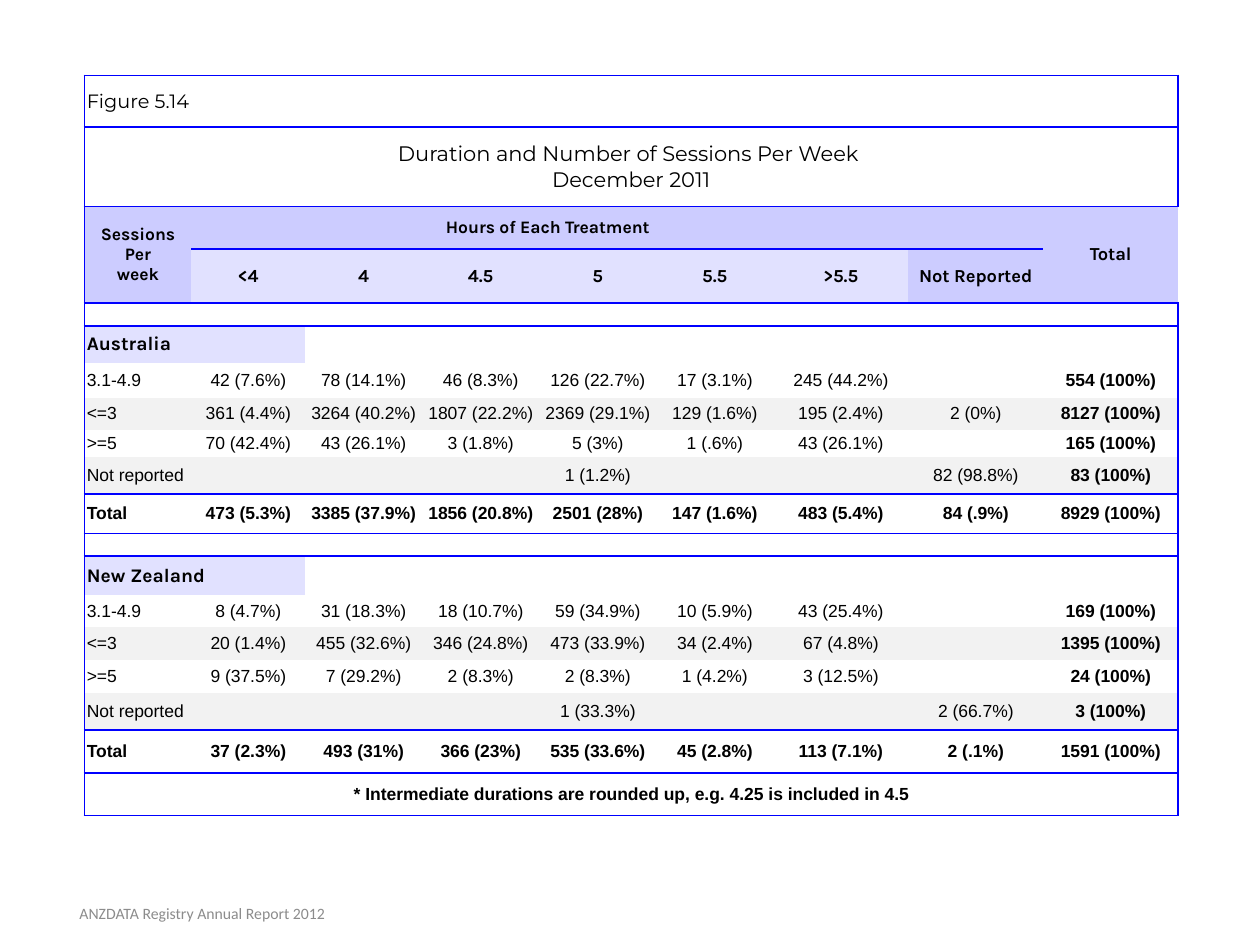
from lxml.etree import SubElement
from pptx import Presentation
from pptx.dml.color import RGBColor
from pptx.enum.text import MSO_ANCHOR, PP_ALIGN
from pptx.oxml.ns import qn
from pptx.util import Cm, Pt

BLACK = RGBColor(0x00, 0x00, 0x00)
BLUE = RGBColor(0x00, 0x00, 0xFF)
LAVENDER = RGBColor(0xCC, 0xCC, 0xFF)
PALE_LAVENDER = RGBColor(0xE1, 0xE1, 0xFF)
PALE_GREY = RGBColor(0xF2, 0xF2, 0xF2)
FOOTER_GREY = RGBColor(0x8C, 0x8C, 0x8C)
NO_STYLE = "{2D5ABB26-0587-4C30-8999-92F81FD0307C}"

COLUMN_WIDTHS = [2.16, 2.29] + [2.36] * 4 + [2.72] * 3
ROW_HEIGHTS = [1.04, 1.6, 0.86, 1.09, 0.46, 0.74, 0.71, 0.64, 0.56, 0.74, 0.79,
               0.46, 0.79, 0.64, 0.66, 0.66, 0.76, 0.86, 0.86]
ROWS = [
    ["Figure 5.14"],
    ["Duration and Number of Sessions Per Week \nDecember 2011"],
    ["Sessions\nPer\nweek", "Hours of Each Treatment ", "", "", "", "", "", "", "Total"],
    ["", "<4", "4", "4.5", "5", "5.5", ">5.5", "Not Reported"],
    [],
    ["Australia"],
    ["3.1-4.9", "42 (7.6%)", "78 (14.1%)", "46 (8.3%)", "126 (22.7%)", "17 (3.1%)",
     "245 (44.2%)", "", "554 (100%)"],
    ["<=3", "361 (4.4%)", "3264 (40.2%)", "1807 (22.2%)", "2369 (29.1%)", "129 (1.6%)",
     "195 (2.4%)", "2 (0%)", "8127 (100%)"],
    [">=5", "70 (42.4%)", "43 (26.1%)", "3 (1.8%)", "5 (3%)", "1 (.6%)",
     "43 (26.1%)", "", "165 (100%)"],
    ["Not reported", "", "", "", "1 (1.2%)", "", "", "82 (98.8%)", "83 (100%)"],
    ["Total", "473 (5.3%)", "3385 (37.9%)", "1856 (20.8%)", "2501 (28%)", "147 (1.6%)",
     "483 (5.4%)", "84 (.9%)", "8929 (100%)"],
    [],
    ["New Zealand"],
    ["3.1-4.9", "8 (4.7%)", "31 (18.3%)", "18 (10.7%)", "59 (34.9%)", "10 (5.9%)",
     "43 (25.4%)", "", "169 (100%)"],
    ["<=3", "20 (1.4%)", "455 (32.6%)", "346 (24.8%)", "473 (33.9%)", "34 (2.4%)",
     "67 (4.8%)", "", "1395 (100%)"],
    [">=5", "9 (37.5%)", "7 (29.2%)", "2 (8.3%)", "2 (8.3%)", "1 (4.2%)",
     "3 (12.5%)", "", "24 (100%)"],
    ["Not reported", "", "", "", "1 (33.3%)", "", "", "2 (66.7%)", "3 (100%)"],
    ["Total", "37 (2.3%)", "493 (31%)", "366 (23%)", "535 (33.6%)", "45 (2.8%)",
     "113 (7.1%)", "2 (.1%)", "1591 (100%)"],
    ["* Intermediate durations are rounded up, e.g. 4.25 is included in 4.5"],
]
LAST_ROW, LAST_COLUMN = len(ROWS) - 1, len(COLUMN_WIDTHS) - 1
HEADER_ROWS = (2, 3)
COUNTRY_ROWS = (5, 12)
SHADED_ROWS = (7, 9, 14, 16)
TOTAL_ROWS = (10, 17)
RULED_ABOVE = (0, 1, 2, 3, 4, 10, 11, 17, 18)
RULED_BELOW = (0, 1, 2, 3, 9, 10, 16, 17, 18)
MERGES = [(0, 0, 0, 8), (1, 0, 1, 8), (2, 0, 3, 0), (2, 1, 2, 6), (2, 8, 3, 8),
          (5, 0, 5, 1), (12, 0, 12, 1), (18, 0, 18, 8)]


def add_border(cell, side):
    line = SubElement(cell._tc.get_or_add_tcPr(), qn(f"a:ln{side}"), w=str(Pt(1)))
    fill = SubElement(line, qn("a:solidFill"))
    SubElement(fill, qn("a:srgbClr"), val=str(BLUE))


def style_paragraph(para, name, size, bold, color):
    para.font.name = name
    para.font.size = Pt(size)
    para.font.bold = bold
    para.font.color.rgb = color


deck = Presentation()
deck.slide_width, deck.slide_height = Cm(25.4), Cm(19.05)
page = deck.slides.add_slide(deck.slide_layouts[6])

frame = page.shapes.add_table(len(ROWS), len(COLUMN_WIDTHS), Cm(1.7), Cm(1.52),
                              Cm(sum(COLUMN_WIDTHS)), Cm(sum(ROW_HEIGHTS)))
table = frame.table
table.first_row = table.horz_banding = False
table._tbl.tblPr.find(qn("a:tableStyleId")).text = NO_STYLE
for column, width in zip(table.columns, COLUMN_WIDTHS):
    column.width = Cm(width)
for row, height in zip(table.rows, ROW_HEIGHTS):
    row.height = Cm(height)
for top, left, bottom, right in MERGES:
    table.cell(top, left).merge(table.cell(bottom, right))

for r, texts in enumerate(ROWS):
    for c in range(LAST_COLUMN + 1):
        cell = table.cell(r, c)
        cell.margin_left = cell.margin_right = Cm(0.05)
        cell.margin_top = cell.margin_bottom = Cm(0.05)
        cell.vertical_anchor = MSO_ANCHOR.MIDDLE

        full_width = r in (0, 1, LAST_ROW)
        tall_header = r in HEADER_ROWS and c in (0, LAST_COLUMN)
        if c == 0:
            add_border(cell, "L")
        if full_width or (c == LAST_COLUMN and r not in HEADER_ROWS):
            add_border(cell, "R")
        if r in RULED_ABOVE and not (r == 3 and tall_header):
            add_border(cell, "T")
        if r in RULED_BELOW:
            add_border(cell, "B")

        if r == 3 and 1 <= c <= 6 or r in COUNTRY_ROWS and c < 2:
            fill_color = PALE_LAVENDER
        elif r in HEADER_ROWS:
            fill_color = LAVENDER
        else:
            fill_color = PALE_GREY if r in SHADED_ROWS else None
        if fill_color is None:
            cell.fill.background()
        else:
            cell.fill.solid()
            cell.fill.fore_color.rgb = fill_color

        text = texts[c] if c < len(texts) else ""
        if not text:
            SubElement(cell.text_frame.paragraphs[0]._p, qn("a:endParaRPr"), sz="800")
            continue
        cell.text = text
        if r < 2:
            name, size, bold = "Montserrat", 11 + r, False
        elif r in HEADER_ROWS:
            name, size, bold = "Karla", 10.5 if r == 3 or c == LAST_COLUMN else 10, True
        elif r in COUNTRY_ROWS:
            name, size, bold = "Karla", 11, True
        else:
            name, size = "Arial", 10
            bold = r in TOTAL_ROWS or r == LAST_ROW or c == LAST_COLUMN
        centered = c > 0 or r in (1, 2, LAST_ROW)
        for para in cell.text_frame.paragraphs:
            para.alignment = PP_ALIGN.CENTER if centered else PP_ALIGN.LEFT
            if name == "Arial" or (r == 3 and c < 7):
                para.space_after = Pt(14)
            style_paragraph(para, name, size, bold, BLACK)

box = page.shapes.add_textbox(Cm(0.05), Cm(17.91), Cm(8.05), Cm(1.02))
box.text_frame.word_wrap = True
box.text_frame.vertical_anchor = MSO_ANCHOR.MIDDLE
footer = box.text_frame.paragraphs[0]
footer.text = "ANZDATA Registry Annual Report 2012"
footer.alignment = PP_ALIGN.CENTER
style_paragraph(footer, "Calibri", 9, False, FOOTER_GREY)

deck.save("out.pptx")
